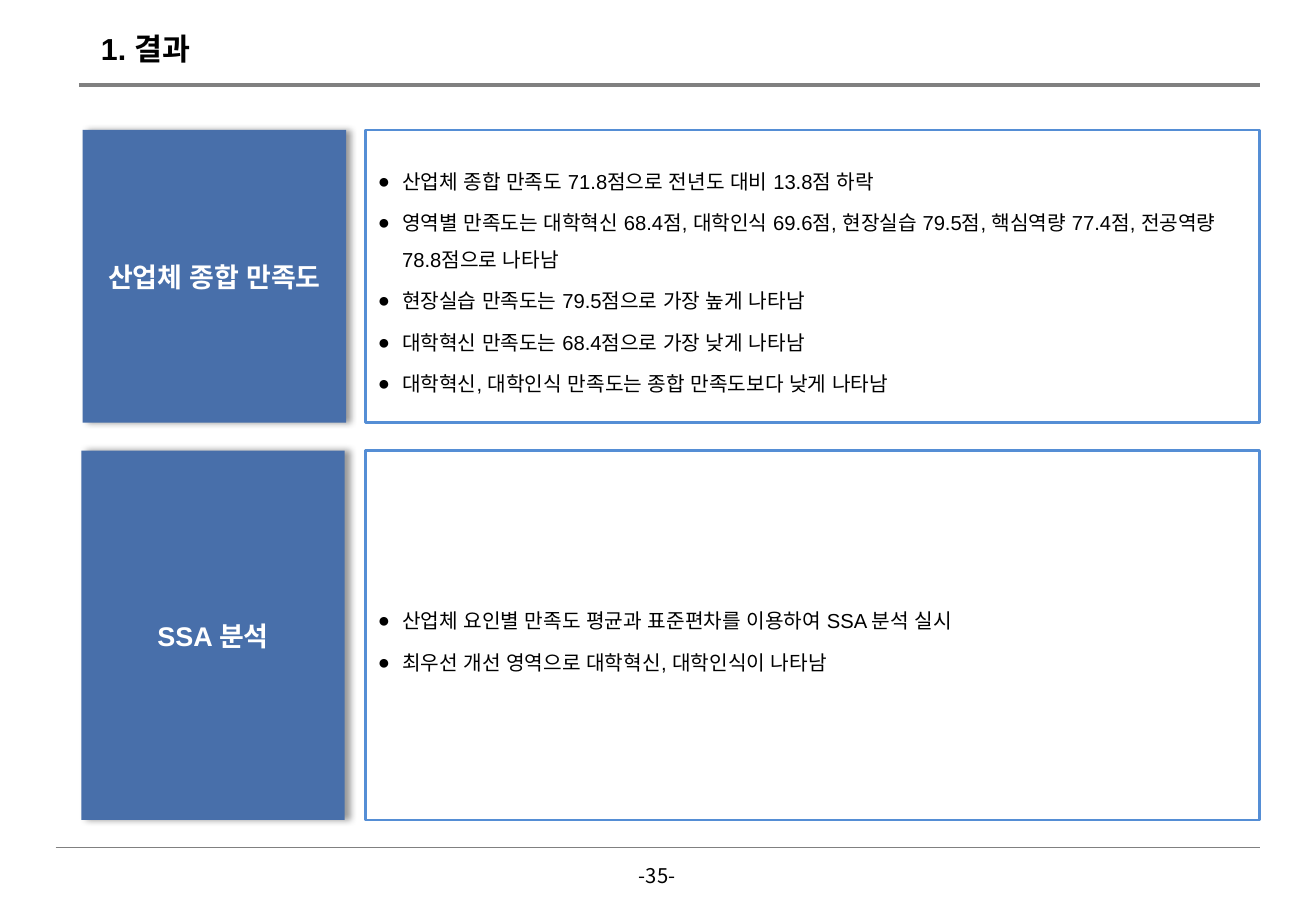
from lxml.etree import SubElement
from pptx import Presentation
from pptx.dml.color import RGBColor
from pptx.enum.shapes import MSO_CONNECTOR, MSO_SHAPE
from pptx.enum.text import MSO_ANCHOR, MSO_AUTO_SIZE, PP_ALIGN
from pptx.oxml.ns import qn
from pptx.util import Pt

HUES = {"ink": "000000", "white": "FFFFFF", "rule": "808080",
        "label": "486FAA", "edge": "558ED5"}

PANELS = [
    (49, 77, 173.5, "산업체 종합 만족도", [
        "산업체 종합 만족도 71.8점으로 전년도 대비 13.8점 하락",
        "영역별 만족도는 대학혁신 68.4점, 대학인식 69.6점, 현장실습 79.5점, "
        "핵심역량 77.4점, 전공역량 78.8점으로 나타남",
        "현장실습 만족도는 79.5점으로 가장 높게 나타남",
        "대학혁신 만족도는 68.4점으로 가장 낮게 나타남",
        "대학혁신, 대학인식 만족도는 종합 만족도보다 낮게 나타남"]),
    (48.2, 267.1, 218.9, "SSA 분석", [
        "산업체 요인별 만족도 평균과 표준편차를 이용하여 SSA 분석 실시",
        "최우선 개선 영역으로 대학혁신, 대학인식이 나타남"]),
]


class Page:
    """Draws styled elements on the current slide."""

    def __init__(self, deck):
        self.slide = deck.slides.add_slide(deck.slide_layouts[3])
        self.shapes = self.slide.shapes
        self.face = "Arial"

    def tint(self, name):
        return RGBColor.from_string(HUES[name])

    def place(self, shape, x, y, w, h):
        shape.left, shape.top = Pt(x), Pt(y)
        shape.width, shape.height = Pt(w), Pt(h)

    def style(self, para, size, hue="ink", bold=False, face=None):
        for run in para.runs:
            font = run.font
            font.size, font.bold = Pt(size), bold
            font.name = face or self.face
            font.color.rgb = self.tint(hue)
            SubElement(font._element, qn("a:ea"), typeface=font.name)

    def rule(self, x, y, end, width):
        line = self.shapes.add_connector(
            MSO_CONNECTOR.STRAIGHT, Pt(x), Pt(y), Pt(end), Pt(y))
        line.line.color.rgb = self.tint("rule")
        line.line.width = Pt(width)
        SubElement(line._element.spPr, qn("a:effectLst"))

    def title(self, text, *box):
        shape = self.shapes.title
        self.place(shape, *box)
        frame = shape.text_frame
        frame.text = text
        frame.word_wrap = False
        frame.auto_size = MSO_AUTO_SIZE.SHAPE_TO_FIT_TEXT
        frame.vertical_anchor = MSO_ANCHOR.TOP
        frame.paragraphs[0].alignment = PP_ALIGN.LEFT
        self.style(frame.paragraphs[0], 18, bold=True)

    def number(self, text, *box):
        frame = self.shapes.add_textbox(*map(Pt, box)).text_frame
        frame.text = text
        frame.word_wrap = False
        frame.paragraphs[0].alignment = PP_ALIGN.CENTER
        self.style(frame.paragraphs[0], 12, face="Noto Sans CJK KR")

    def label(self, text, *box):
        shape = self.shapes.add_shape(MSO_SHAPE.RECTANGLE, *map(Pt, box))
        shape.shadow.inherit = False
        shape.fill.solid()
        shape.fill.fore_color.rgb = self.tint("label")
        shape.line.fill.background()
        shade = SubElement(
            shape._element.spPr.find(qn("a:effectLst")), qn("a:outerShdw"),
            blurRad=str(Pt(4)), dist=str(Pt(3)), dir="0",
            algn="l", rotWithShape="0")
        hue = SubElement(shade, qn("a:srgbClr"), val=HUES["ink"])
        SubElement(hue, qn("a:alpha"), val="40000")
        frame = shape.text_frame
        frame.text = text
        frame.vertical_anchor = MSO_ANCHOR.MIDDLE
        frame.paragraphs[0].alignment = PP_ALIGN.CENTER
        self.style(frame.paragraphs[0], 16, "white", True)

    def bullets(self, shape, items, *box):
        self.place(shape, *box)
        shape.line.color.rgb = self.tint("edge")
        shape.line.width = Pt(1.5)
        frame = shape.text_frame
        frame.text = "\n".join(items)
        frame.word_wrap = True
        frame.auto_size = MSO_AUTO_SIZE.NONE
        frame.vertical_anchor = MSO_ANCHOR.MIDDLE
        for i, para in enumerate(frame.paragraphs):
            props = para._p.get_or_add_pPr()
            props.set("marL", str(Pt(14.4)))
            props.set("indent", str(-Pt(14.4)))
            SubElement(props, qn("a:buFont"), typeface=self.face)
            SubElement(props, qn("a:buChar"), char="●")
            para.line_spacing = 1.5
            para.space_before = Pt(3 if i else 0)
            self.style(para, 12)


def main():
    deck = Presentation()
    deck.slide_width, deck.slide_height = Pt(780), Pt(540)
    page = Page(deck)
    page.rule(46.8, 50.4, 747, 2)
    page.rule(33, 502.4, 747, 0.5)
    page.title("1. 결과", 52.6, 14.4, 72.7, 28.8)
    page.number("-35-", 370.8, 508.3, 37.4, 21.6)
    bodies = list(page.slide.placeholders)[1:]
    for body, (x, y, h, name, items) in zip(bodies, PANELS):
        page.label(name, x, y, 156.2, h)
        page.bullets(body, items, 216.7, y, 530, h)
    deck.save("out.pptx")


if __name__ == "__main__":
    main()
